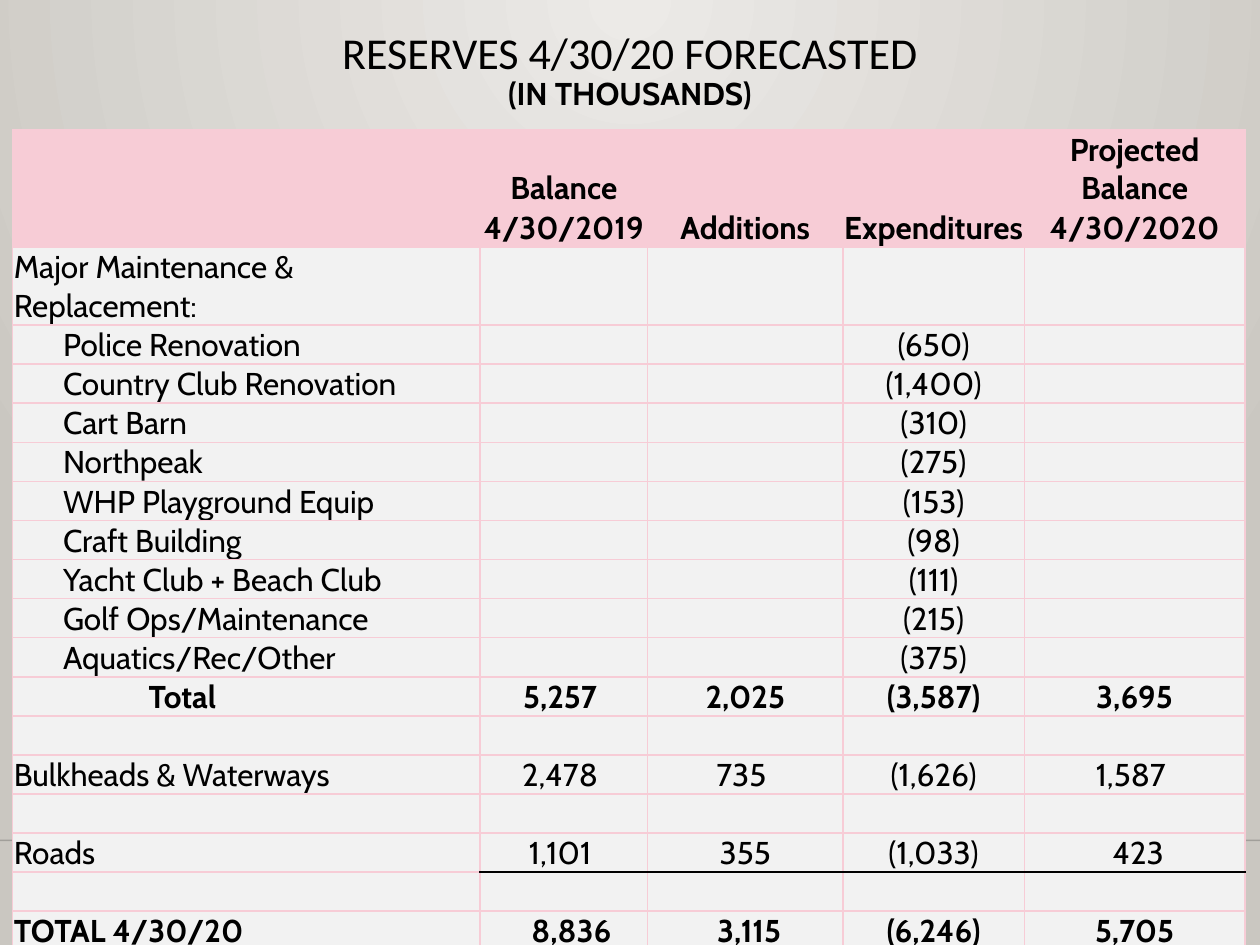
"""Build the slide with the forecast of reserves at 4/30/20."""
from lxml import etree
from pptx import Presentation
from pptx import util as u
from pptx.dml.color import RGBColor
from pptx.enum import shapes, text
from pptx.oxml import parse_xml
from pptx.oxml.ns import nsdecls, qn

COLORS = {"ink": "000000", "pink": "F7CCD6", "cell": "F2F2F2", "light": "ECEAE7", "dark": "CAC7C1"}
FONT = "Cabin"
ROW = 0.31
COLUMNS = [3.71, 1.33, 1.55, 1.44, 1.75]
SPACE = 0.06
PROJECTS = [
    ("Police Renovation", "(650)"),
    ("Country Club Renovation", "(1,400)"),
    ("Cart Barn", "(310)"),
    ("Northpeak", "(275)"),
    ("WHP Playground Equip", "(153)"),
    ("Craft Building", "(98)"),
    ("Yacht Club + Beach Club", "(111)"),
    ("Golf Ops/Maintenance", "(215)"),
    ("Aquatics/Rec/Other", "(375)"),
]
BLANK = [""] * 5
ROWS = [
    ["", "Balance", "", "", "Projected Balance"],
    ["", "4/30/2019", "Additions", "Expenditures", "4/30/2020"],
    ["Major Maintenance & Replacement:", "", "", "", ""],
    *[[name, "", "", cost, ""] for name, cost in PROJECTS],
    ["Total", "5,257", "2,025", "(3,587)", "3,695"],
    BLANK,
    ["Bulkheads & Waterways", "2,478", "735", "(1,626)", "1,587"],
    BLANK,
    ["Roads", "1,101", "355", "(1,033)", "423"],
    BLANK,
    ["TOTAL 4/30/20", "8,836", "3,115", "(6,246)", "5,705"],
]
TOTAL, ROADS, GRAND = 12, 16, 18
BOLD_ROWS = {0, 1, TOTAL, GRAND}
TALL_ROWS = {0, 2}
INDENTS = {**{row: 0.39 for row in range(3, TOTAL)}, TOTAL: 1.07}
NUDGES = {(TOTAL, 1): -1, (14, 1): -1, (14, 2): -1, (14, 4): -1, (ROADS, 1): -1,
          (ROADS, 4): 1, (GRAND, 1): 2, (GRAND, 2): 1}


def style(span, **formats):
    for name, value in {"name": FONT, "size": u.Pt(18), "bold": False, **formats}.items():
        setattr(span.font, name, value)
    span.font.color.rgb = RGBColor.from_string(COLORS["ink"])


def border(cell, side, position, color):
    cell._tc.get_or_add_tcPr().insert(position, parse_xml(
        f'<a:{side} {nsdecls("a")} w="12700"><a:solidFill><a:srgbClr val="{color}"/>'
        f'</a:solidFill><a:prstDash val="solid"/></a:{side}>'))


deck = Presentation()
deck.slide_width, deck.slide_height = u.Inches(10), u.Inches(7.5)
page = deck.slides.add_slide(deck.slide_layouts[6])

backdrop = page.background.fill
backdrop.gradient()
for stop, name in zip(backdrop.gradient_stops, ("light", "dark")):
    stop.color.rgb = RGBColor.from_string(COLORS[name])
gradient = page.background._cSld.find(".//" + qn("a:gradFill"))
gradient.replace(gradient.find(qn("a:lin")), parse_xml(
    f'<a:path {nsdecls("a")} path="circle">'
    '<a:fillToRect l="43000" t="0" r="43000" b="100000"/></a:path>'))

floor = page.shapes.add_connector(
    shapes.MSO_CONNECTOR.STRAIGHT, 0, u.Inches(6.67), deck.slide_width, u.Inches(6.67))
floor.line.width = u.Pt(1)
floor.line.color.rgb = RGBColor.from_string(COLORS["ink"])
tint = floor.line._ln.find(".//" + qn("a:srgbClr"))
etree.SubElement(tint, qn("a:alpha")).set("val", "20000")
etree.SubElement(floor._element.spPr, qn("a:effectLst"))

title = page.shapes.add_textbox(*map(u.Inches, (0.4, 0.25, 9.2, 0.64)))
frame = title.text_frame
frame.word_wrap = True
frame.vertical_anchor = text.MSO_ANCHOR.MIDDLE
para = frame.paragraphs[0]
para.alignment = text.PP_ALIGN.CENTER
para.line_spacing = 0.9
span = para.add_run()
span.text = "RESERVES 4/30/20 FORECASTED"
style(span, name="Calibri", size=u.Pt(25.2))
para.add_line_break()
span = para.add_run()
span.text = "(IN THOUSANDS)"
style(span, bold=True)

heights = [ROW * (2 if row in TALL_ROWS else 1) for row in range(len(ROWS))]
table = page.shapes.add_table(
    len(ROWS), len(COLUMNS),
    *map(u.Inches, (0.1, 1.03, sum(COLUMNS), sum(heights)))).table
table.horz_banding = table.first_row = False
for column, width in zip(table.columns, COLUMNS):
    column.width = u.Inches(width)

for r, values in enumerate(ROWS):
    table.rows[r].height = u.Inches(heights[r])
    for c, value in enumerate(values):
        cell = table.cell(r, c)
        nudge = NUDGES.get((r, c), 0) * SPACE
        formats = {
            "margin_left": u.Inches(0.01 + max(nudge, 0)),
            "margin_right": u.Inches(0.01 + max(-nudge, 0)),
            "margin_top": u.Inches(0.01),
            "margin_bottom": 0,
            "vertical_anchor": text.MSO_ANCHOR.BOTTOM if r < 2 or c == 0 else text.MSO_ANCHOR.MIDDLE,
        }
        for name, setting in formats.items():
            setattr(cell, name, setting)
        cell.fill.solid()
        cell.fill.fore_color.rgb = RGBColor.from_string(COLORS["pink" if r < 2 else "cell"])
        for position, side in enumerate(("lnL", "lnR", "lnT", "lnB")):
            ruled = c > 0 and (r, side) in {(ROADS, "lnB"), (ROADS + 1, "lnT")}
            border(cell, side, position, COLORS["ink" if ruled else "pink"])
        para = cell.text_frame.paragraphs[0]
        if value:
            para.alignment = text.PP_ALIGN.CENTER if c else text.PP_ALIGN.LEFT
            if c == 0 and r in INDENTS:
                para._p.get_or_add_pPr().set("marL", str(u.Inches(INDENTS[r])))
            span = para.add_run()
            span.text = value
            style(span, bold=r in BOLD_ROWS)
        else:
            etree.SubElement(para._p, qn("a:endParaRPr")).set("sz", "1400")

deck.save("out.pptx")
